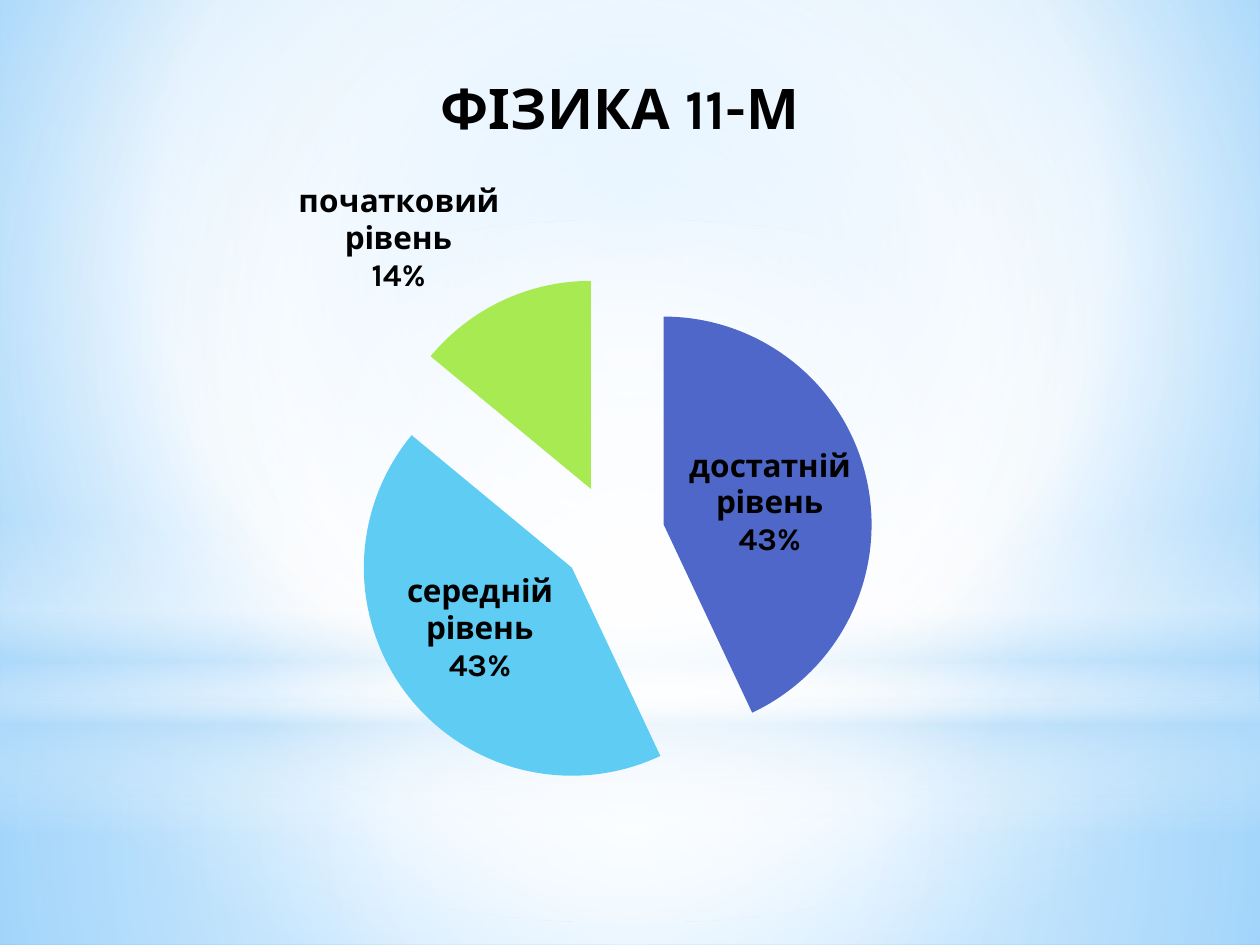
from lxml import etree
from pptx import Presentation
from pptx.chart.data import CategoryChartData
from pptx.dml.color import RGBColor
from pptx.enum.chart import XL_CHART_TYPE, XL_LABEL_POSITION
from pptx.enum.shapes import MSO_SHAPE
from pptx.oxml.ns import qn
from pptx.util import Pt

PIE = XL_CHART_TYPE.PIE
BEST_FIT = XL_LABEL_POSITION.BEST_FIT
RECT, OVAL = MSO_SHAPE.RECTANGLE, MSO_SHAPE.OVAL
PX = 914400 // 126
CENTRE = (50, 50, 50, 50)


def rgb(value):
    return RGBColor.from_string(value)


def set_gradient(holder, stops, focus):
    """Swap the solid fill in holder for a gradient: circular around focus, or vertical if None."""
    solid = holder.find(qn("a:solidFill"))
    grad = etree.Element(qn("a:gradFill"), rotWithShape="1")
    stop_list = etree.SubElement(grad, qn("a:gsLst"))
    for position, color, opacity in stops:
        stop = etree.SubElement(stop_list, qn("a:gs"), pos=str(position * 1000))
        tint = etree.SubElement(stop, qn("a:srgbClr"), val=color)
        if opacity < 100:
            etree.SubElement(tint, qn("a:alpha"), val=str(opacity * 1000))
    if focus:
        circle = etree.SubElement(grad, qn("a:path"))
        circle.set("path", "circle")
        sides = {side: str(part * 1000) for side, part in zip("ltrb", focus)}
        etree.SubElement(circle, qn("a:fillToRect"), sides)
    else:
        etree.SubElement(grad, qn("a:lin"), ang="5400000", scaled="0")
    holder.replace(solid, grad)


deck = Presentation()
deck.slide_width, deck.slide_height = 1260 * PX, 945 * PX
page = deck.slides.add_slide(deck.slide_layouts[6])

# Background and light layers
page.background.fill.solid()
page.background.fill.fore_color.rgb = rgb("FFFFFF")
set_gradient(page._element.find(".//" + qn("p:bgPr")),
             [(0, "9ED5FF", 100), (60, "FFFFFF", 100), (100, "5BB9FF", 100)],
             (20, 10, 20, 60))

layers = [
    (RECT, 703, 242, CENTRE,
     [(0, "FFFFFF", 91), (37, "FFFFFF", 76), (100, "B4DCFA", 79)]),
    (RECT, 0, 703, CENTRE,
     [(0, "FFFFFF", 89), (48, "FFFFFF", 62), (100, "B4DCFA", 79)]),
    (RECT, 519, 315, None,
     [(0, "FFFFFF", 0), (29, "FFFFFF", 30), (45, "B4DCFA", 40),
      (55, "FFFFFF", 26), (65, "B4DCFA", 60), (100, "FFFFFF", 0)]),
    (OVAL, 220, 703, CENTRE, [(0, "FFFFFF", 100), (56, "FFFFFF", 0)]),
]
for kind, top, height, focus, stops in layers:
    layer = page.shapes.add_shape(kind, 0, top * PX, 1260 * PX, height * PX)
    layer.shadow.inherit = False
    layer.line.fill.background()
    layer.fill.solid()
    set_gradient(layer._element.spPr, stops, focus)

# Pie chart of achievement levels
levels = [("достатній рівень", 43, "4E67C8"),
          ("середній рівень", 43, "5ECCF3"),
          ("початковий рівень", 14, "A7EA52")]
data = CategoryChartData()
data.categories = [name for name, _, _ in levels]
data.add_series("Series 1", [share for _, share, _ in levels])
left, top, width, height = 54, 55, 1143, 814
chart = page.shapes.add_chart(PIE, left * PX, top * PX, width * PX, height * PX, data).chart
chart.font.name = "Karla"
chart.font.size = Pt(10)
chart.font.color.rgb = rgb("000000")
chart.has_legend = False

chart.has_title = True
title = chart.chart_title.text_frame.paragraphs[0]
title.text = "ФІЗИКА 11-М"
title.font.name = "Karla"
title.font.size = Pt(32)
title.font.bold = True
title.font.color.rgb = rgb("000000")

# Slide px of the title corner and of the square around the exploded pie
title_place = {"x": (430 - left) / width, "y": (61 - top) / height}
pie_place = {"x": (353 - left) / width, "y": (276 - top) / height,
             "w": 520 / width, "h": 520 / height}
title_element = chart.chart_title._element
plot_element = chart._chartSpace.find(".//" + qn("c:plotArea"))
for owner, place in ((title_element, title_place), (plot_element, pie_place)):
    for automatic in owner.findall(qn("c:layout")):
        owner.remove(automatic)
    layout = etree.Element(qn("c:layout"))
    manual = etree.SubElement(layout, qn("c:manualLayout"))
    if owner is plot_element:
        etree.SubElement(manual, qn("c:layoutTarget"), val="inner")
        owner.insert(0, layout)
    else:
        owner.find(qn("c:tx")).addnext(layout)
    for axis in "xy":
        etree.SubElement(manual, qn(f"c:{axis}Mode"), val="edge")
    for key, value in place.items():
        etree.SubElement(manual, qn(f"c:{key}"), val=f"{value:.4f}")

plot = chart.plots[0]
plot.vary_by_categories = True
pie = plot.series[0]
for index, (_, _, color) in enumerate(levels):
    slice_fill = pie.points[index].format.fill
    slice_fill.solid()
    slice_fill.fore_color.rgb = rgb(color)
explosion = etree.Element(qn("c:explosion"), val="25")
pie._element.find(qn("c:dPt")).addprevious(explosion)
for point in pie._element.findall(qn("c:dPt")):
    point.find(qn("c:spPr")).addprevious(etree.Element(qn("c:explosion"), val="25"))

labels = pie.data_labels
labels.show_value = False
labels.show_category_name = True
labels.show_percentage = True
labels.position = BEST_FIT
labels.font.name = "Karla"
labels.font.size = Pt(18)
labels.font.bold = True
labels.font.color.rgb = rgb("000000")
separator = etree.Element(qn("c:separator"))
separator.text = "\n"
labels._element.find(qn("c:showBubbleSize")).addnext(separator)

deck.save("out.pptx")
